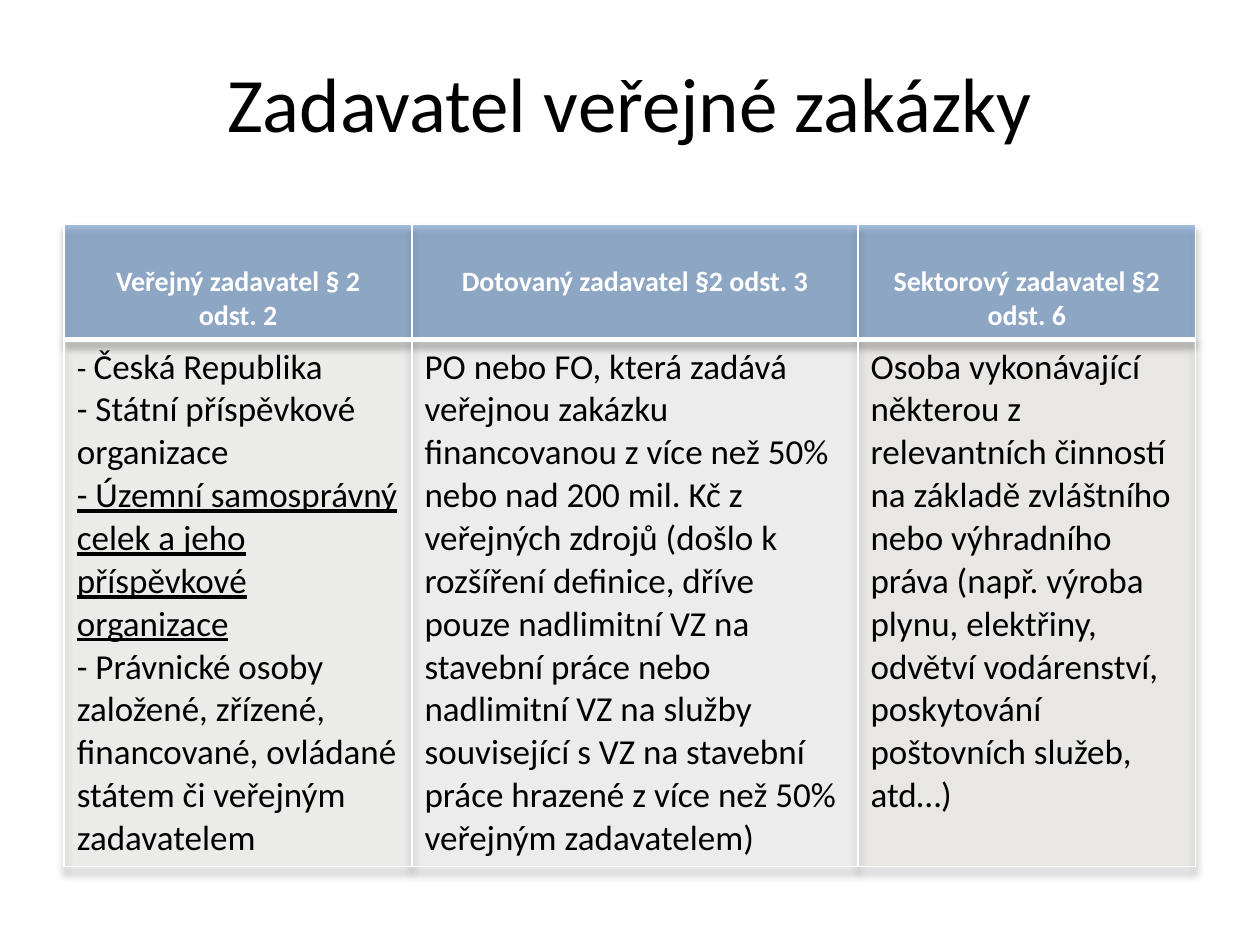
from lxml import etree
from pptx import Presentation
from pptx import util as u
from pptx.dml.color import RGBColor
from pptx.enum import text
from pptx.oxml import ns

HEADERS = [
    ["Veřejný zadavatel § 2", "odst. 2"],
    ["Dotovaný zadavatel §2 odst. 3"],
    ["Sektorový zadavatel §2 odst. 6"],
]
BODIES = [
    [
        "Česká Republika",
        "- Státní příspěvkové organizace",
        "- Územní samosprávný celek a jeho příspěvkové organizace",
        "- Právnické osoby založené, zřízené, financované, ovládané státem či veřejným zadavatelem",
    ],
    ["PO nebo FO, která zadává veřejnou zakázku financovanou z více než 50% "
     "nebo nad 200 mil. Kč z veřejných zdrojů (došlo k rozšíření definice, dříve "
     "pouze nadlimitní VZ na stavební práce nebo nadlimitní VZ na služby "
     "související s VZ na stavební práce hrazené z více než 50% veřejným zadavatelem)"],
    ["Osoba vykonávající některou z relevantních činností na základě zvláštního "
     "nebo výhradního práva (např. výroba plynu, elektřiny, odvětví vodárenství, "
     "poskytování poštovních služeb, atd…)"],
]
BODY_FILLS = ["EEECE1", "F2F2F2", "DDD9C3"]


def color(value):
    return RGBColor.from_string(value)


def style_cell(cell, fill, alpha, top, bottom):
    cell.fill.solid()
    cell.fill.fore_color.rgb = color(fill)
    properties = cell._tc.get_or_add_tcPr()
    tint = properties.find(".//" + ns.qn("a:srgbClr"))
    etree.SubElement(tint, ns.qn("a:alpha"), val=str(alpha * 1000))
    borders = [("L", 1), ("R", 1), ("T", top), ("B", bottom)]
    for index, (side, width) in enumerate(borders):
        line = etree.Element(ns.qn("a:ln" + side), w=str(u.Pt(width)))
        solid = etree.SubElement(line, ns.qn("a:solidFill"))
        etree.SubElement(solid, ns.qn("a:srgbClr"), val="FFFFFF")
        properties.insert(index, line)


presentation = Presentation()
presentation.slide_width = u.Inches(10)
presentation.slide_height = u.Inches(7.5)
slide = presentation.slides.add_slide(presentation.slide_layouts[5])

title = slide.shapes.title
title.left, title.top = u.Inches(0.5), u.Inches(0.3)
title.width, title.height = u.Inches(9), u.Inches(1.01)
title.text_frame.text = "Zadavatel veřejné zakázky"
title.text_frame.vertical_anchor = text.MSO_ANCHOR.MIDDLE
paragraph = title.text_frame.paragraphs[0]
paragraph.alignment = text.PP_ALIGN.CENTER
paragraph.font.size = u.Pt(44)
paragraph.font.name = "Calibri"
paragraph.font.color.rgb = color("000000")

table = slide.shapes.add_table(
    2, 3, u.Inches(0.51), u.Inches(1.78), u.Inches(8.98), u.Inches(5.07)
).table
for column, width in zip(table.columns, [2.76, 3.54, 2.68]):
    column.width = u.Inches(width)
for row, height in zip(table.rows, [0.9, 4.17]):
    row.height = u.Inches(height)

effects = etree.Element(ns.qn("a:effectLst"))
shadow = etree.SubElement(
    effects, ns.qn("a:outerShdw"), blurRad="50800", dist="50800", dir="5400000"
)
shade = etree.SubElement(shadow, ns.qn("a:srgbClr"), val="000000")
etree.SubElement(shade, ns.qn("a:alpha"), val="40000")
table._tbl.tblPr.insert(0, effects)

for row_index, row_texts in enumerate([HEADERS, BODIES]):
    is_header = row_index == 0
    for column_index, lines in enumerate(row_texts):
        cell = table.cell(row_index, column_index)
        cell.text = "\n".join(lines)
        if is_header:
            cell.margin_top = u.Inches(0.32)
            style_cell(cell, "4F81BD", 50, 1, 3)
        else:
            style_cell(cell, BODY_FILLS[column_index], 20, 3, 1)
        for paragraph in cell.text_frame.paragraphs:
            paragraph.alignment = text.PP_ALIGN.CENTER if is_header else text.PP_ALIGN.LEFT
            paragraph.font.name = "Calibri"
            paragraph.font.size = u.Pt(16 if is_header else 20)
            paragraph.font.bold = is_header
            paragraph.font.color.rgb = color("FFFFFF" if is_header else "000000")

public_bodies = table.cell(1, 0).text_frame.paragraphs
public_bodies[2].font.underline = True
first = public_bodies[0]
first.runs[0].text = "- "
first.runs[0].font.size = u.Pt(18)
first.add_run().text = BODIES[0][0]

presentation.save("out.pptx")
